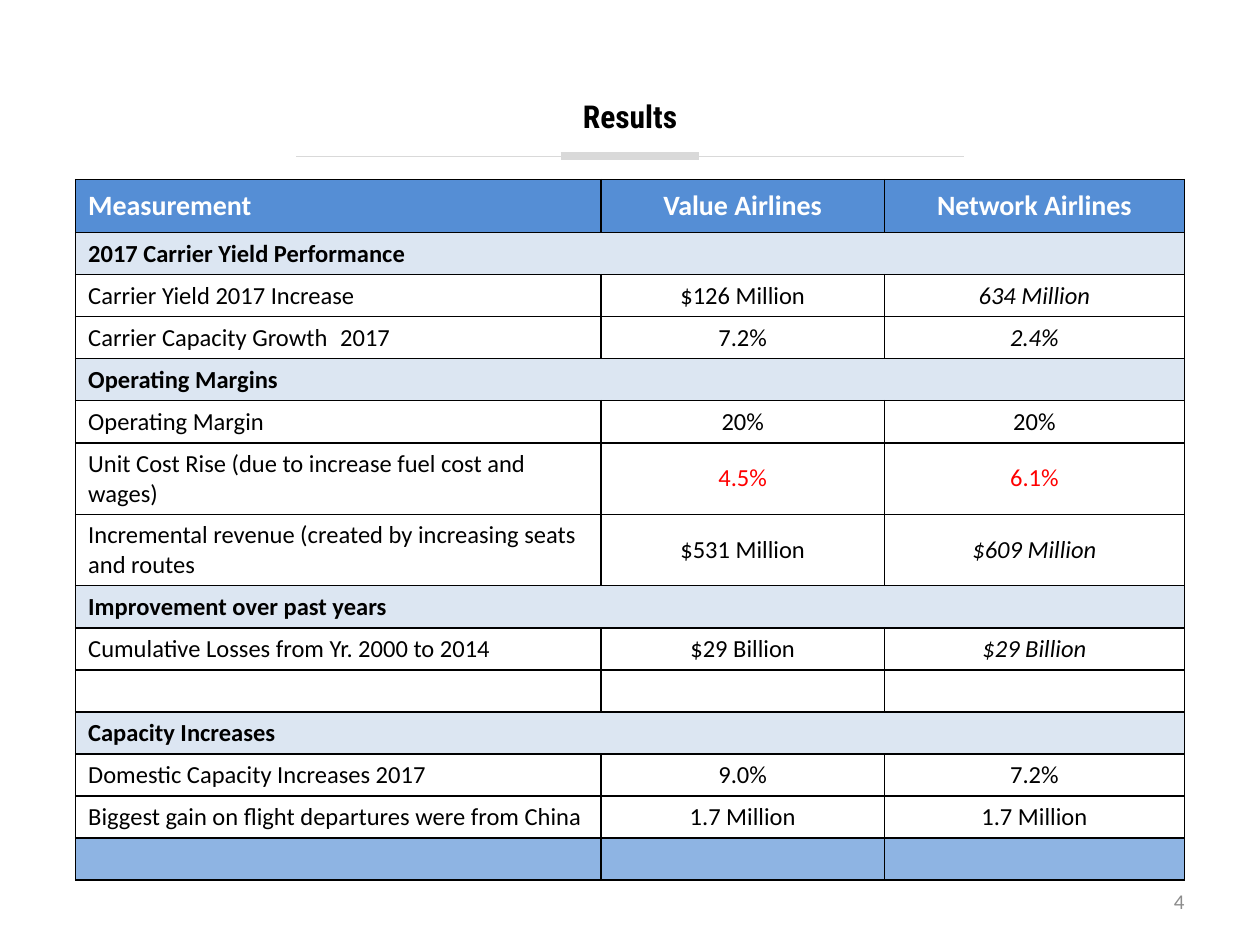
from lxml import etree
from pptx import Presentation
from pptx.dml.color import RGBColor
from pptx.enum.shapes import MSO_CONNECTOR
from pptx.enum.text import MSO_ANCHOR, MSO_AUTO_SIZE, PP_ALIGN
from pptx.oxml.ns import qn
from pptx.util import Inches, Pt

WIDE, HIGH = 10, 7.5
LEFT, MID, RIGHT = PP_ALIGN.LEFT, PP_ALIGN.CENTER, PP_ALIGN.RIGHT
CENTRE = MSO_ANCHOR.MIDDLE
FIT = MSO_AUTO_SIZE.SHAPE_TO_FIT_TEXT
FIXED = MSO_AUTO_SIZE.NONE
LINE = MSO_CONNECTOR.STRAIGHT
BLACK, WHITE, GREY = "000000", "FFFFFF", "D9D9D9"
BLUE, PALE, FOOT, RED = "558ED5", "DCE6F2", "8EB4E3", "FF0000"
COLS = (4.17, 2.25, 2.38)
HEAD, ROW = 0.42, 0.31

# Each row holds its cells, then the marks of its two values: i italic, r red
ROWS = [
    (("Measurement", "Value Airlines", "Network Airlines"), "  "),
    (("2017 Carrier Yield Performance",), ""),
    (("Carrier Yield 2017 Increase", "$126 Million", "634 Million"), " i"),
    (("Carrier Capacity Growth\t2017", "7.2%", "2.4%"), " i"),
    (("Operating Margins",), ""),
    (("Operating Margin", "20%", "20%"), "  "),
    (("Unit Cost Rise (due to increase fuel cost and wages)",
      "4.5%", "6.1%"), "rr"),
    (("Incremental revenue (created by increasing seats and routes",
      "$531 Million", "$609 Million"), " i"),
    (("Improvement over past years",), ""),
    (("Cumulative Losses from Yr. 2000 to 2014",
      "$29 Billion", "$29 Billion"), " i"),
    (("", "", ""), "  "),
    (("Capacity Increases",), ""),
    (("Domestic Capacity Increases 2017", "9.0%", "7.2%"), "  "),
    (("Biggest gain on flight departures were from China",
      "1.7 Million", "1.7 Million"), "  "),
    (("", "", ""), "  "),
]


def across(share):
    """Turn a share of the slide's width into a length."""
    return Inches(share * WIDE)


def down(share):
    """Turn a share of the slide's height into a length."""
    return Inches(share * HIGH)


def tint(code):
    """Turn a hex string into a colour."""
    return RGBColor.from_string(code)


def write(frame, text, size, color, align, bold=False, slant=False,
          face="Calibri"):
    """Write one run, or size the empty paragraph when there is no text."""
    para = frame.paragraphs[0]
    para.alignment = align
    if not text:
        end = etree.SubElement(para._p, qn("a:endParaRPr"))
        end.set("sz", str(size * 100))
        return
    run = para.add_run()
    run.text = text
    font = run.font
    font.name, font.size, font.bold, font.italic = face, Pt(size), bold, slant
    font.color.rgb = tint(color)


def place(shape, left, top, width, height):
    """Set a shape's box in shares of the slide."""
    shape.left, shape.top = across(left), down(top)
    shape.width, shape.height = across(width), down(height)


def title(slide, text):
    """Fill and move the title placeholder."""
    shape = slide.shapes.title
    place(shape, 0, 0.1, 1, 0.045)
    frame = shape.text_frame
    frame.margin_left = frame.margin_right = Inches(0.02)
    frame.margin_top = frame.margin_bottom = Inches(0.02)
    frame.word_wrap, frame.auto_size = True, FIT
    frame.vertical_anchor = CENTRE
    write(frame, text, 18, BLACK, MID, True, face="Roboto Condensed")


def rule(group, share, weight):
    """Draw a flat line of the given share, centred on the slide."""
    start, level = (1 - share) / 2, down(0.165)
    line = group.shapes.add_connector(
        LINE, across(start), level, across(start + share), level)
    line.line.color.rgb = tint(GREY)
    line.line.width = Pt(weight)
    etree.SubElement(line._element.spPr, qn("a:effectLst"))


def edge(cell):
    """Give a cell black borders of one point."""
    props = cell._tc.get_or_add_tcPr()
    for side in "LRTB":
        line = etree.SubElement(props, qn(f"a:ln{side}"), w=str(Pt(1)))
        fill = etree.SubElement(line, qn("a:solidFill"))
        etree.SubElement(fill, qn("a:srgbClr"), val=BLACK)


def paint(cell, code):
    """Fill a cell, or leave it clear when there is no colour."""
    if code:
        cell.fill.solid()
        cell.fill.fore_color.rgb = tint(code)
    else:
        cell.fill.background()


def shade(row):
    """Choose the fill of a row."""
    if row == 0:
        return BLUE
    if row == len(ROWS) - 1:
        return FOOT
    return PALE if len(ROWS[row][0]) == 1 else None


def grid(slide):
    """Build the table of results."""
    tall = HEAD + ROW * (len(ROWS) - 1)
    table = slide.shapes.add_table(
        len(ROWS), len(COLS), across(0.06), down(0.19),
        Inches(sum(COLS)), Inches(tall)).table
    table.first_row = table.horz_banding = False
    for col, width in zip(table.columns, COLS):
        col.width = Inches(width)
    for r, (texts, marks) in enumerate(ROWS):
        table.rows[r].height = Inches(ROW if r else HEAD)
        band = len(texts) == 1
        for c in range(len(COLS)):
            cell = table.cell(r, c)
            edge(cell)
            paint(cell, shade(r))
            cell.vertical_anchor = CENTRE
            mark = marks[c - 1] if c and marks else " "
            color = RED if mark == "r" else BLACK
            write(cell.text_frame, texts[c] if c < len(texts) else "",
                  14 if r else 16, color if r else WHITE,
                  MID if c else LEFT, band or r == 0, mark == "i")
        if band:
            table.cell(r, 0).merge(table.cell(r, len(COLS) - 1))


def number(slide, text):
    """Write the page number at the lower right."""
    box = slide.shapes.add_textbox(0, 0, 0, 0)
    place(box, 0.717, 0.927, 0.233, 0.053)
    frame = box.text_frame
    frame.word_wrap, frame.auto_size = True, FIXED
    frame.vertical_anchor = CENTRE
    write(frame, text, 12, "8C8C8C", RIGHT)


def main():
    """Build the slide and save it."""
    deck = Presentation()
    deck.slide_width, deck.slide_height = Inches(WIDE), Inches(HIGH)
    slide = deck.slides.add_slide(deck.slide_layouts[5])
    title(slide, "Results")
    group = slide.shapes.add_group_shape()
    rule(group, 0.53, 0.25)
    rule(group, 0.11, 4.5)
    grid(slide)
    number(slide, "4")
    deck.save("out.pptx")


if __name__ == "__main__":
    main()
